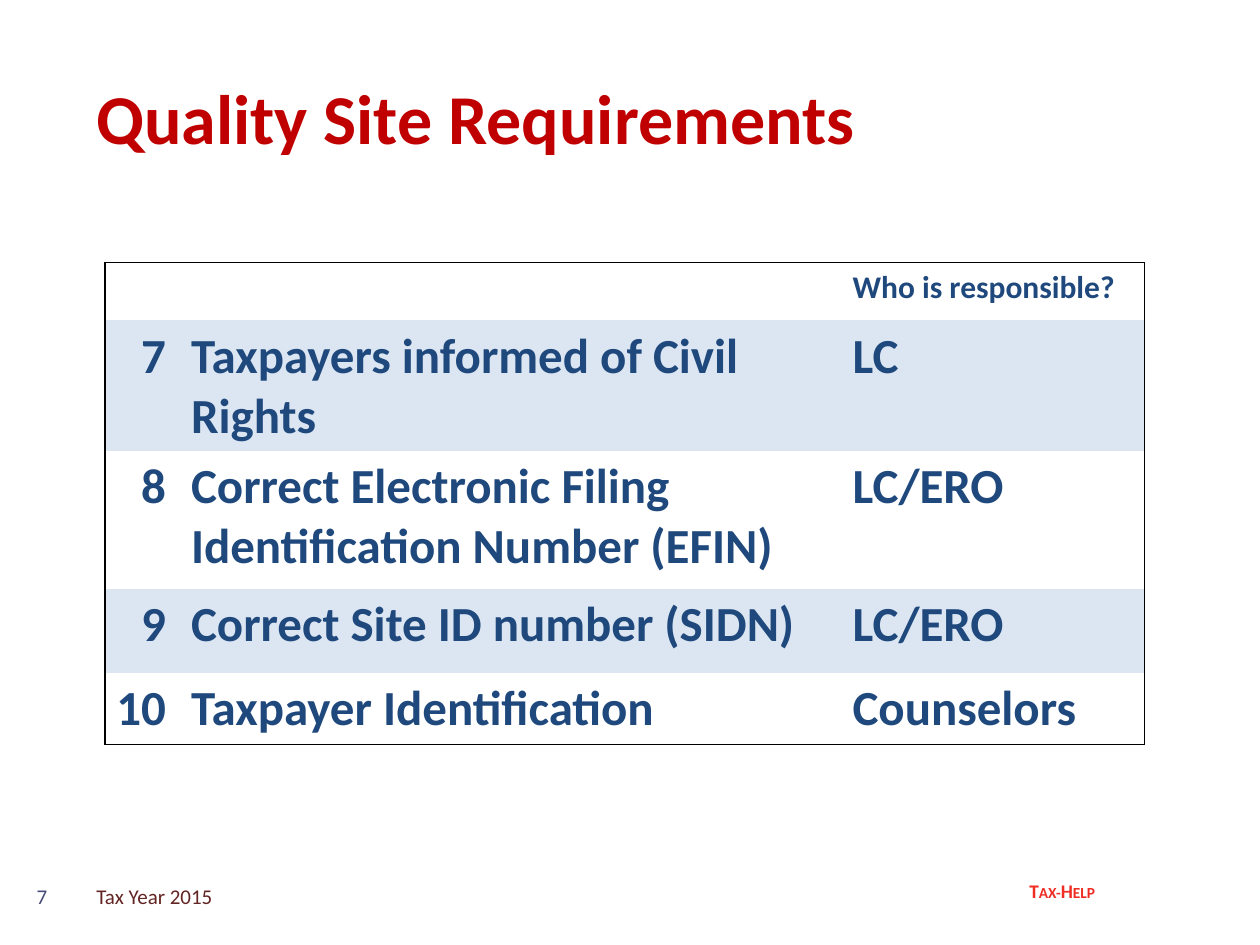
from lxml import etree
from pptx import Presentation
from pptx.dml.color import RGBColor
from pptx.enum import text
from pptx.oxml.ns import qn
from pptx.util import Pt

RED = RGBColor(0xC0, 0x00, 0x00)
BRIGHT_RED = RGBColor(0xEE, 0x2E, 0x24)
MAROON = RGBColor(0x63, 0x25, 0x23)
SLATE = RGBColor(0x47, 0x4B, 0x78)
NAVY = RGBColor(0x1F, 0x49, 0x7D)
BAND = RGBColor(0xDC, 0xE6, 0xF2)
BORDER = RGBColor(0x00, 0x00, 0x00)

LEFT, CENTER, RIGHT = text.PP_ALIGN.LEFT, text.PP_ALIGN.CENTER, text.PP_ALIGN.RIGHT
TOP, MIDDLE = text.MSO_ANCHOR.TOP, text.MSO_ANCHOR.MIDDLE
FONT = "Calibri"

LABELS = [
    ("Tax-Help", (576, 499, 62, 21), 11, BRIGHT_RED, True, CENTER, TOP, 7.2),
    ("7", (12, 497.5, 24, 29), 12, SLATE, False, CENTER, MIDDLE, 0),
    ("Quality Site Requirements", (48, 21.6, 624, 90), 40, RED, True, LEFT, MIDDLE, 7.2),
    ("Tax Year 2015", (48, 497.5, 228, 29), 12, MAROON, False, LEFT, MIDDLE, 7.2),
]
SMALL_CAPS = "Tax-Help"

ROWS = [
    ("", "", "Who is responsible?"),
    ("7", "Taxpayers informed of Civil Rights", "LC"),
    ("8", "Correct Electronic Filing Identification Number (EFIN)", "LC/ERO"),
    ("9", "Correct Site ID number (SIDN)", "LC/ERO"),
    ("10", "Taxpayer Identification", "Counselors"),
]
TABLE_LEFT, TABLE_TOP = 60, 150
COLUMN_WIDTHS = [42, 378, 174]
ROW_HEIGHTS = [33, 74, 79, 48, 41]


def add_span(para, words, size, color, bold):
    span = para.add_run()
    span.text = words
    span.font.name = FONT
    span.font.size = Pt(size)
    span.font.bold = bold
    span.font.color.rgb = color
    return span


def add_label(page, words, place, size, color, bold, align, anchor, inset):
    box = page.shapes.add_textbox(*map(Pt, place))
    frame = box.text_frame
    frame.word_wrap = True
    frame.vertical_anchor = anchor
    frame.margin_left = frame.margin_right = Pt(inset)
    para = frame.paragraphs[0]
    para.alignment = align
    span = add_span(para, words, size, color, bold)
    if words == SMALL_CAPS:
        span._r.get_or_add_rPr().set("cap", "small")


def set_borders(cell, drawn):
    properties = cell._tc.get_or_add_tcPr()
    for index, side in enumerate("LRTB"):
        line = etree.Element(qn(f"a:ln{side}"), w=str(Pt(1) if side in drawn else 0))
        if side in drawn:
            fill = etree.SubElement(line, qn("a:solidFill"))
            etree.SubElement(fill, qn("a:srgbClr"), val=str(BORDER))
        else:
            etree.SubElement(line, qn("a:noFill"))
        properties.insert(index, line)


def fill_cell(cell, words, row, column):
    if row % 2:
        cell.fill.solid()
        cell.fill.fore_color.rgb = BAND
    else:
        cell.fill.background()
    edges = {
        "L": column == 0,
        "R": column == len(COLUMN_WIDTHS) - 1,
        "T": row == 0,
        "B": row == len(ROWS) - 1,
    }
    set_borders(cell, [side for side, outer in edges.items() if outer])
    para = cell.text_frame.paragraphs[0]
    if column == 0:
        cell.margin_left = 0
        para.alignment = RIGHT
    if words:
        add_span(para, words, 28 if row else 18, NAVY, True)


def add_requirements(page):
    table = page.shapes.add_table(
        len(ROWS), len(COLUMN_WIDTHS), Pt(TABLE_LEFT), Pt(TABLE_TOP),
        Pt(sum(COLUMN_WIDTHS)), Pt(sum(ROW_HEIGHTS)),
    ).table
    table.first_row = table.horz_banding = False
    for column, width in zip(table.columns, COLUMN_WIDTHS):
        column.width = Pt(width)
    for row, height in zip(table.rows, ROW_HEIGHTS):
        row.height = Pt(height)
    for row, entries in enumerate(ROWS):
        for column, words in enumerate(entries):
            fill_cell(table.cell(row, column), words, row, column)


def main():
    deck = Presentation()
    deck.slide_width, deck.slide_height = Pt(720), Pt(540)
    page = deck.slides.add_slide(deck.slide_layouts[6])
    for label in LABELS:
        add_label(page, *label)
    add_requirements(page)
    deck.save("out.pptx")


if __name__ == "__main__":
    main()
